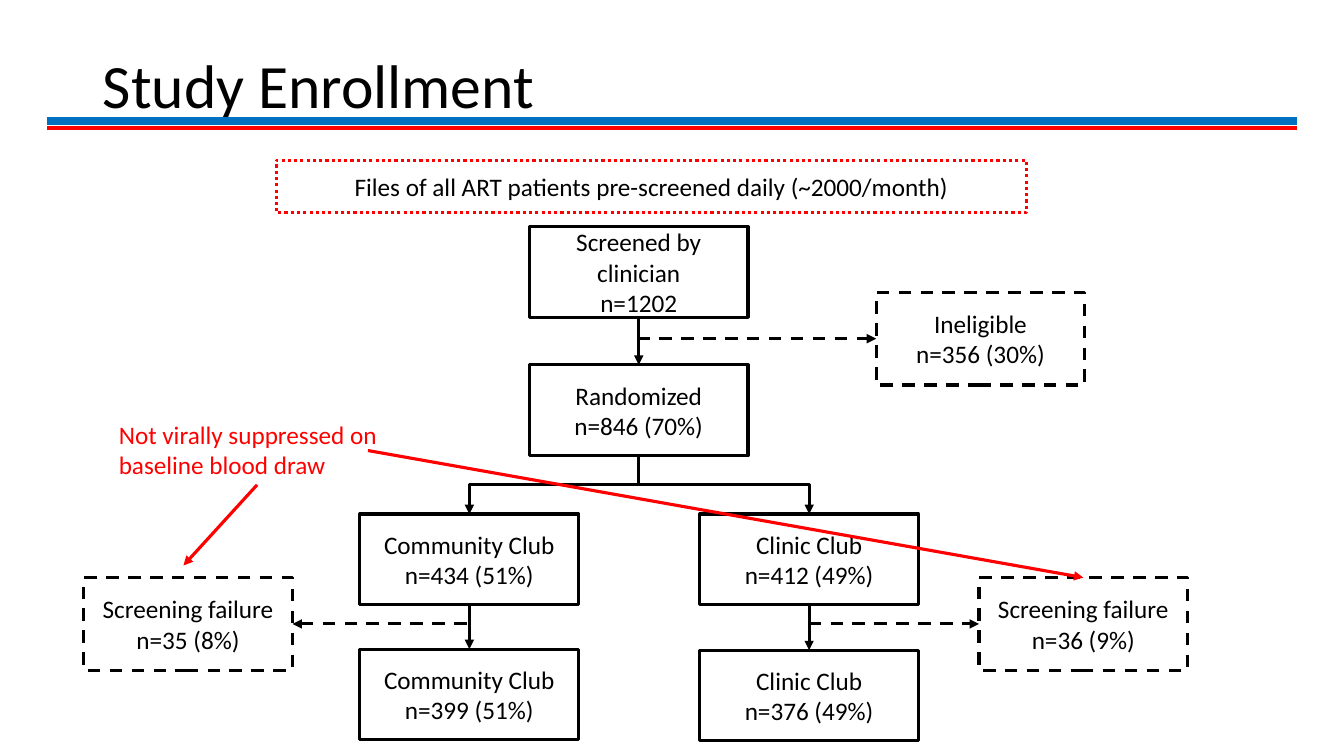
from lxml.etree import SubElement
from pptx import Presentation
from pptx.dml.color import RGBColor
from pptx.enum.dml import MSO_LINE as DASH
from pptx.enum.shapes import MSO_CONNECTOR as LINK, MSO_SHAPE as SHAPE
from pptx.enum.text import MSO_ANCHOR as ANCHOR, MSO_AUTO_SIZE as FIT, PP_ALIGN as ALIGN
from pptx.oxml.ns import qn
from pptx.util import Pt

PX = 9144  # 100 px to the inch
BLACK, RED, BLUE = "000000", "FF0000", "0070C0"
TOP, LEFT, BOTTOM, RIGHT = range(4)
BOX_W, BOX_H = 217, 90
SIDE_W, SIDE_H = 207, 92


def emu(*lengths):
    return [round(length * PX) for length in lengths]


def rgb(color):
    return RGBColor.from_string(color)


def write(frame, lines, size=18, color=BLACK, align=ALIGN.CENTER, anchor=ANCHOR.MIDDLE):
    settings = {"word_wrap": True, "auto_size": FIT.NONE, "vertical_anchor": anchor}
    for name, value in settings.items():
        setattr(frame, name, value)
    frame.text = "\n".join(lines)
    for paragraph in frame.paragraphs:
        paragraph.alignment = align
        for name, value in {"name": "Calibri", "size": Pt(size)}.items():
            setattr(paragraph.font, name, value)
        paragraph.font.color.rgb = rgb(color)


def style_line(line, color, width, dash):
    line.color.rgb = rgb(color)
    line.width = Pt(width)
    if dash:
        line.dash_style = dash


def add_box(slide, x, y, w, h, lines, color=BLACK, dash=None):
    box = slide.shapes.add_shape(SHAPE.RECTANGLE, *emu(x, y, w, h))
    box.shadow.inherit = False
    box.fill.background()
    style_line(box.line, color, 2.25, dash)
    write(box.text_frame, lines)
    return box


def add_stage(slide, x, y, *lines):
    return add_box(slide, x, y, BOX_W, BOX_H, lines)


def add_exclusion(slide, x, y, *lines):
    return add_box(slide, x, y, SIDE_W, SIDE_H, lines, dash=DASH.DASH)


def add_line(slide, start, end, color=BLACK, width=2.25, dash=None, arrow=True, kind=LINK.STRAIGHT):
    """Draw a line between two ends, each an (x, y) point or a (shape, side) joint."""
    points = [(0, 0) if hasattr(end_[0], "shape_id") else end_ for end_ in (start, end)]
    line = slide.shapes.add_connector(kind, *emu(*points[0], *points[1]))
    for joint, join in ((start, line.begin_connect), (end, line.end_connect)):
        if hasattr(joint[0], "shape_id"):
            join(*joint)
    style_line(line.line, color, width, dash)
    properties = line._element.spPr
    if arrow:
        SubElement(properties.find(qn("a:ln")), qn("a:tailEnd"), type="triangle")
    SubElement(properties, qn("a:effectLst"))
    return line


def add_fork_arm(slide, parent, child):
    """Link parent bottom to child top by an elbow that leaves downwards."""
    arm = add_line(slide, (parent, BOTTOM), (child, TOP), kind=LINK.ELBOW)
    parent_x = parent.left + parent.width // 2
    child_x = child.left + child.width // 2
    start_y = parent.top + parent.height
    drop, reach = child.top - start_y, abs(child_x - parent_x)
    frame = {
        "left": (parent_x + child_x - drop) // 2,
        "top": (start_y + child.top - reach) // 2,
        "width": drop,
        "height": reach,
    }
    for name, value in frame.items():
        setattr(arm, name, value)
    rightward = child_x > parent_x
    turn = {
        "rot": str((270 if rightward else 90) * 60000),
        "flipH": str(int(rightward)),
        "flipV": "0",
    }
    for name, value in turn.items():
        arm._element.spPr.find(qn("a:xfrm")).set(name, value)


def add_title(slide, text):
    title = slide.shapes.title
    for name, value in zip(("left", "top", "width", "height"), emu(92, 15, 1150, 145)):
        setattr(title, name, value)
    write(title.text_frame, [text], size=44, align=ALIGN.LEFT)
    title.text_frame.paragraphs[0].line_spacing = 0.9


def main():
    deck = Presentation()
    deck.slide_width, deck.slide_height = emu(1333, 750)
    slide = deck.slides.add_slide(deck.slide_layouts[5])
    add_title(slide, "Study Enrollment")

    screened = add_stage(slide, 525, 225, "Screened by clinician", "n=1202")
    randomized = add_stage(slide, 525, 362, "Randomized", "n=846 (70%)")
    community = add_stage(slide, 357, 510, "Community Club", "n=434 (51%)")
    clinic = add_stage(slide, 694, 510, "Clinic Club", "n=412 (49%)")
    community_final = add_stage(slide, 357, 644, "Community Club", "n=399 (51%)")
    clinic_final = add_stage(slide, 694, 645, "Clinic Club", "n=376 (49%)")
    for upper, lower in ((screened, randomized), (community, community_final), (clinic, clinic_final)):
        add_line(slide, (upper, BOTTOM), (lower, TOP))
    for club in (clinic, community):
        add_fork_arm(slide, randomized, club)

    ineligible = add_exclusion(slide, 869, 290, "Ineligible", "n=356 (30%)")
    clinic_failure = add_exclusion(slide, 971, 573, "Screening failure", "n=36 (9%)")
    community_failure = add_exclusion(slide, 83, 573, "Screening failure", "n=35 (8%)")
    for branch, excluded, side in (
        ((632, 336), ineligible, LEFT),
        ((802, 619), clinic_failure, LEFT),
        ((463, 619), community_failure, RIGHT),
    ):
        add_line(slide, branch, (excluded, side), dash=DASH.DASH)

    add_box(slide, 274, 159, 744, 52, ["Files of all ART patients pre-screened daily (~2000/month)"],
            color=RED, dash=DASH.ROUND_DOT)
    for y, color, width in ((120, BLUE, 6), (127, RED, 3)):
        add_line(slide, (47, y), (1286, y), color, width, arrow=False)

    reason = slide.shapes.add_textbox(*emu(108, 411, 294, 71))
    write(reason.text_frame, ["Not virally suppressed on baseline blood draw"],
          color=RED, align=ALIGN.LEFT, anchor=ANCHOR.TOP)
    add_line(slide, (255, 481), (182, 561), RED)
    add_line(slide, (365, 447), (clinic_failure, TOP), RED)

    deck.save("out.pptx")


if __name__ == "__main__":
    main()
